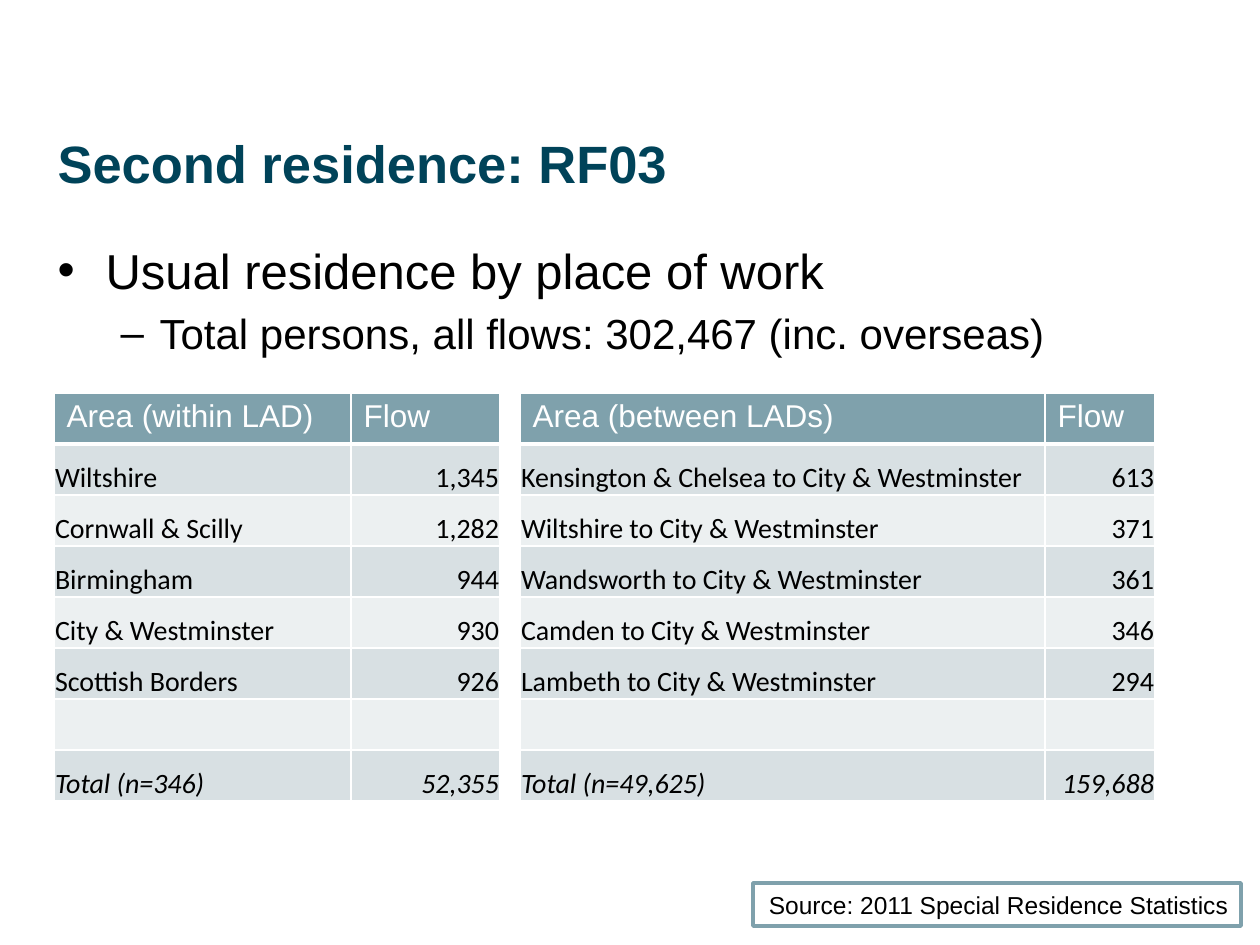
from dataclasses import dataclass

from lxml import etree
from pptx import Presentation
from pptx.dml.color import RGBColor
from pptx.enum.shapes import MSO_SHAPE
from pptx.enum.text import MSO_ANCHOR, MSO_AUTO_SIZE, PP_ALIGN
from pptx.oxml.ns import qn
from pptx.util import Emu, Pt

LEFT, RIGHT = PP_ALIGN.LEFT, PP_ALIGN.RIGHT
TOP, MIDDLE, BOTTOM = MSO_ANCHOR.TOP, MSO_ANCHOR.MIDDLE, MSO_ANCHOR.BOTTOM
NO_FIT, GROW = MSO_AUTO_SIZE.NONE, MSO_AUTO_SIZE.SHAPE_TO_FIT_TEXT
RECTANGLE = MSO_SHAPE.RECTANGLE

PX_PER_INCH = 126
COLORS = {
    "title": "004359",
    "text": "000000",
    "white": "FFFFFF",
    "accent": "7FA1AC",
    "odd_row": "D8E0E3",
    "even_row": "ECF0F1",
}
TABLE_TOP, ROW_HEIGHT = 393, 51


@dataclass
class Bullet:
    text: str
    level: int
    size: int
    char: str
    margin: int
    hanging: int
    space_before: int


@dataclass
class FlowTable:
    left: int
    widths: tuple[int, int]
    heading: str
    flows: list[tuple[str, str]]
    total: tuple[str, str]


BULLETS = [
    Bullet("Usual residence by place of work", 0, 28, "•", 48, 48, 0),
    Bullet("Total persons, all flows: 302,467 (inc. overseas)", 1, 24, "–", 102, 39, 5),
]
FLOW_TABLES = [
    FlowTable(54, (297, 149), "Area (within LAD)", [
        ("Wiltshire", "1,345"),
        ("Cornwall & Scilly", "1,282"),
        ("Birmingham", "944"),
        ("City & Westminster", "930"),
        ("Scottish Borders", "926"),
    ], ("Total (n=346)", "52,355")),
    FlowTable(520, (525, 110), "Area (between LADs)", [
        ("Kensington & Chelsea to City & Westminster", "613"),
        ("Wiltshire to City & Westminster", "371"),
        ("Wandsworth to City & Westminster", "361"),
        ("Camden to City & Westminster", "346"),
        ("Lambeth to City & Westminster", "294"),
    ], ("Total (n=49,625)", "159,688")),
]


def px(length: int) -> Emu:
    return Emu(round(length * 914400 / PX_PER_INCH))


def rgb(name: str) -> RGBColor:
    return RGBColor.from_string(COLORS[name])


def write(paragraph, text: str, *, size: int, color: str = "text", font: str = "Arial",
          bold: bool = False, italic: bool = False, align=LEFT) -> None:
    paragraph.alignment = align
    run = paragraph.add_run()
    run.text = text
    run.font.name, run.font.size = font, Pt(size)
    run.font.bold, run.font.italic = bold, italic
    run.font.color.rgb = rgb(color)


def place(shape, left: int, top: int, width: int, height: int) -> None:
    shape.left, shape.top = px(left), px(top)
    shape.width, shape.height = px(width), px(height)


def add_bullet(paragraph, bullet: Bullet) -> None:
    paragraph.level = bullet.level
    paragraph.space_before = Pt(bullet.space_before)
    properties = paragraph._p.get_or_add_pPr()
    properties.set("marL", str(px(bullet.margin)))
    properties.set("indent", str(-px(bullet.hanging)))
    etree.SubElement(properties, qn("a:buChar"), char=bullet.char)
    write(paragraph, bullet.text, size=bullet.size)


def set_borders(cell, bottom: int) -> None:
    properties = cell._tc.get_or_add_tcPr()
    for side, points in (("L", 1), ("R", 1), ("T", 1), ("B", bottom)):
        line = etree.SubElement(properties, qn(f"a:ln{side}"), w=str(Pt(points)))
        fill = etree.SubElement(line, qn("a:solidFill"))
        etree.SubElement(fill, qn("a:srgbClr"), val=COLORS["white"])


def fill_cell(cell, text: str, row: int, column: int, is_total: bool) -> None:
    is_header = row == 0
    set_borders(cell, 3 if is_header else 1)
    cell.fill.solid()
    cell.fill.fore_color.rgb = rgb(
        "accent" if is_header else "odd_row" if row % 2 else "even_row")
    paragraph = cell.text_frame.paragraphs[0]
    if is_header:
        write(paragraph, text, size=18, color="white")
        return
    cell.vertical_anchor = BOTTOM
    cell.margin_left = cell.margin_right = cell.margin_top = px(1)
    cell.margin_bottom = 0
    if text:
        write(paragraph, text, size=16, font="Calibri", italic=is_total,
              align=RIGHT if column else LEFT)


def add_flow_table(slide, spec: FlowTable) -> None:
    rows = [(spec.heading, "Flow"), *spec.flows, ("", ""), spec.total]
    table = slide.shapes.add_table(
        len(rows), 2, px(spec.left), px(TABLE_TOP),
        px(sum(spec.widths)), px(ROW_HEIGHT * len(rows))).table
    for column, width in zip(table.columns, spec.widths):
        column.width = px(width)
    for r, values in enumerate(rows):
        table.rows[r].height = px(ROW_HEIGHT)
        for c, text in enumerate(values):
            fill_cell(table.cell(r, c), text, r, c, r == len(rows) - 1)


def add_source(slide, text: str) -> None:
    source = slide.shapes.add_shape(RECTANGLE, px(753), px(883), px(488), px(43))
    source.shadow.inherit = False
    source.fill.solid()
    source.fill.fore_color.rgb = rgb("white")
    source.line.color.rgb = rgb("accent")
    source.line.width = Pt(2)
    frame = source.text_frame
    frame.word_wrap = False
    frame.auto_size = GROW
    frame.vertical_anchor = MIDDLE
    write(frame.paragraphs[0], text, size=14, align=RIGHT)


def main() -> None:
    presentation = Presentation()
    presentation.slide_width, presentation.slide_height = px(1260), px(945)
    slide = presentation.slides.add_slide(presentation.slide_layouts[1])

    # Title and bullet list
    title, body = slide.shapes.title, slide.placeholders[1]
    place(title, 45, 125, 1169, 179)
    place(body, 45, 234, 1169, 476)
    for placeholder in (title, body):
        placeholder.text_frame.vertical_anchor = TOP
        placeholder.text_frame.auto_size = NO_FIT
    write(title.text_frame.paragraphs[0], "Second residence: RF03",
          size=30, color="title", bold=True)
    for index, bullet in enumerate(BULLETS):
        frame = body.text_frame
        add_bullet(frame.add_paragraph() if index else frame.paragraphs[0], bullet)

    # Flow tables
    for spec in FLOW_TABLES:
        add_flow_table(slide, spec)

    # Source note
    add_source(slide, "Source: 2011 Special Residence Statistics")

    presentation.save("out.pptx")


if __name__ == "__main__":
    main()
